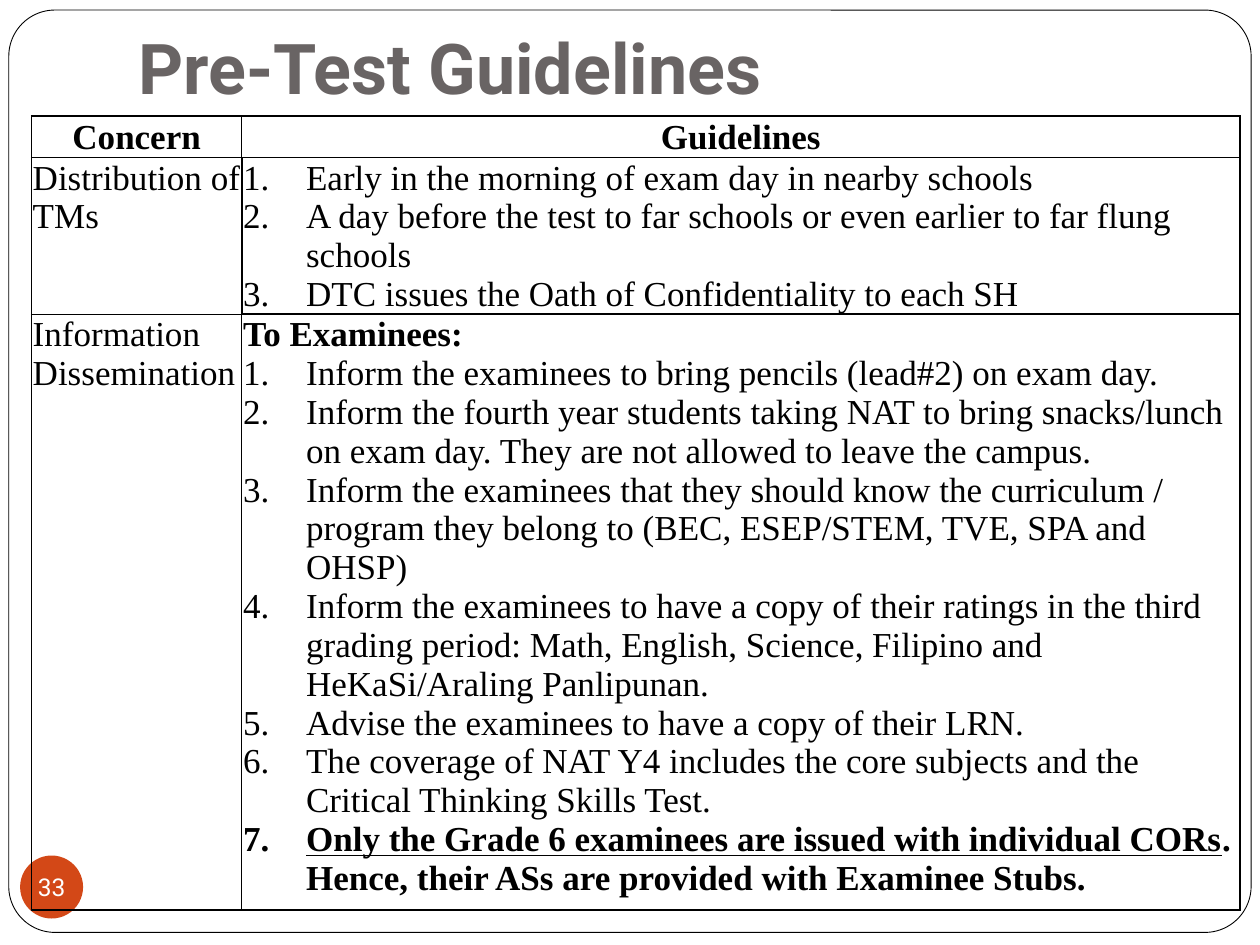
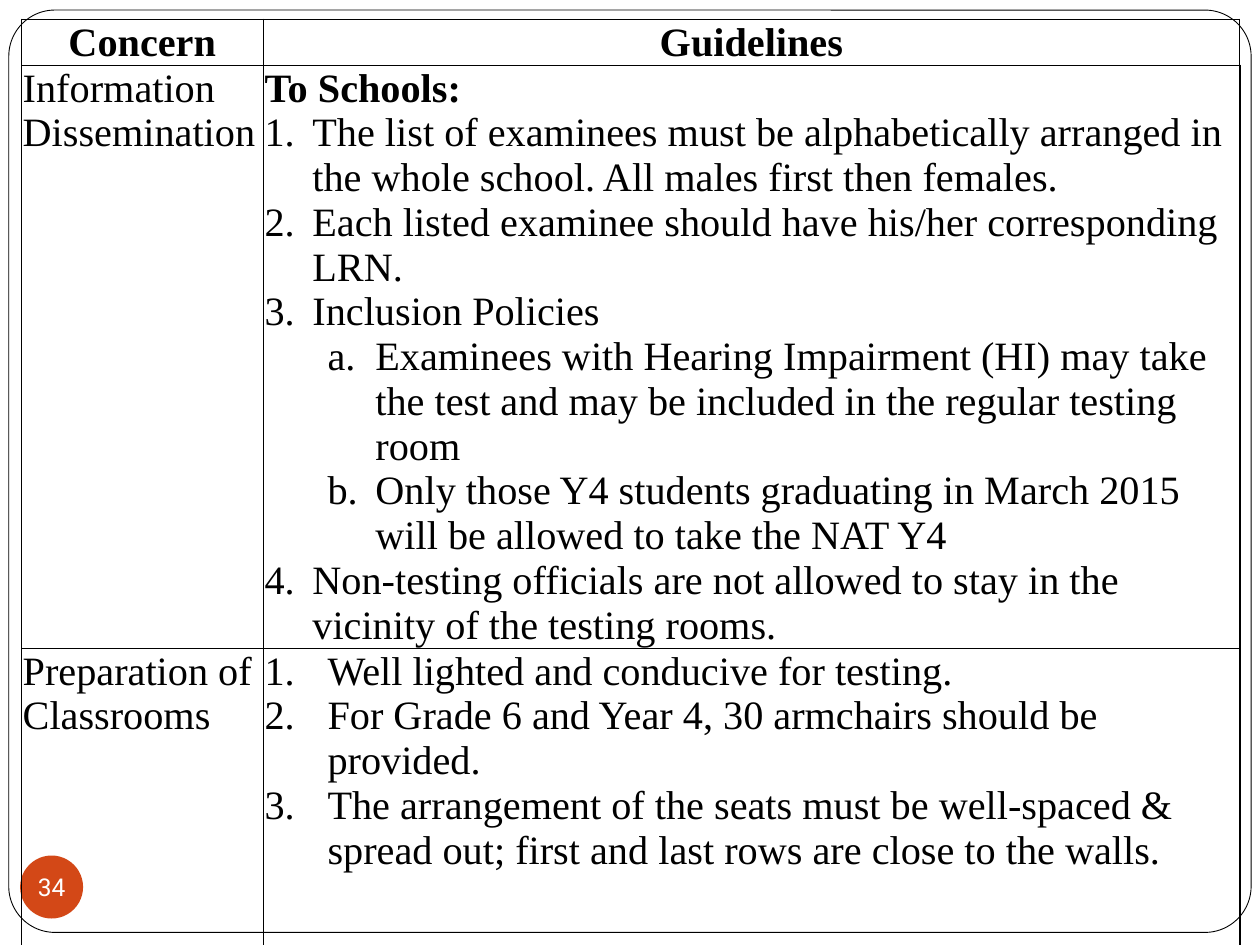
from dataclasses import dataclass

from lxml.etree import SubElement as sub
from pptx import Presentation
from pptx.dml.color import RGBColor as RGB
from pptx.enum.shapes import MSO_SHAPE as Shape
from pptx.enum.text import MSO_ANCHOR as Anchor
from pptx.enum.text import MSO_AUTO_SIZE as Fit
from pptx.enum.text import PP_ALIGN as Align
from pptx.oxml.ns import qn
from pptx.util import Emu, Pt


# Shared look and scale
@dataclass(frozen=True)
class Theme:
    ink: str = "000000"
    paper: str = "FFFFFF"
    grey: str = "696464"
    rust: str = "D34817"
    sans: str = "Roboto"
    serif: str = "Times New Roman"
    title: int = 40
    badge: int = 14
    dense: int = 20
    roomy: int = 23
    thin: float = 0.5
    thick: float = 1


LOOK = Theme()
THIN, THICK = LOOK.thin, LOOK.thick
SCALE = 9144  # 100 px to the inch
SIDES = ("a:lnL", "a:lnR", "a:lnT", "a:lnB")
MARKS = {"1": "arabicPeriod", "a": "alphaLcPeriod"}


def px(num):
    return Emu(num * SCALE)


def hue(code):
    return RGB.from_string(code)


# Text
def write(para, text, size, font=LOOK.serif, color=LOOK.ink,
          bold=False, under=False, align=Align.LEFT):
    para.alignment = align
    run = para.add_run()
    run.text = text
    face = run.font
    face.size, face.name = Pt(size), font
    face.bold, face.underline = bold, under
    face.color.rgb = hue(color)


def inset(item, left, top, right, base):
    item.margin_left, item.margin_top = px(left), px(top)
    item.margin_right, item.margin_bottom = px(right), px(base)


def number(para, mark, hang):
    """Number a paragraph with a hanging indent; letters sit one level in."""
    left = hang
    if mark == "a":
        para.level = 1
        left += 50
    props = para._p.get_or_add_pPr()
    props.set("marL", str(px(left)))
    props.set("indent", str(px(-hang)))
    sub(props, qn("a:buAutoNum"), type=MARKS[mark])


# Frame, page badge and title
def draw(slide, kind, box, fill, line=None):
    shape = slide.shapes.add_shape(kind, *map(px, box))
    shape.shadow.inherit = False
    shape.fill.solid()
    shape.fill.fore_color.rgb = hue(fill)
    if line:
        shape.line.color.rgb = hue(line)
        shape.line.width = Pt(THIN)
    else:
        shape.line.fill.background()
    return shape


def start(deck, layout, page):
    slide = deck.slides.add_slide(deck.slide_layouts.get_by_name(layout))
    frame = draw(slide, Shape.ROUNDED_RECTANGLE, (7, 8, 986, 732),
                 LOOK.paper, LOOK.ink)
    frame.adjustments[0] = 0.05
    slide.shapes.element.insert(2, frame.element)  # behind the title
    badge = draw(slide, Shape.OVAL, (16, 679, 50, 50), LOOK.rust)
    body = badge.text_frame
    inset(body, 0, 0, 0, 0)
    body.word_wrap = False
    body.vertical_anchor = Anchor.MIDDLE
    write(body.paragraphs[0], str(page), LOOK.badge, font=LOOK.sans,
          color=LOOK.paper, align=Align.CENTER)
    return slide


def head(slide, text):
    title = slide.shapes.title
    title.left, title.top, title.width, title.height = map(
        px, (100, 9, 850, 87))
    body = title.text_frame
    body.auto_size = Fit.NONE
    body.vertical_anchor = Anchor.BOTTOM
    inset(body, 10, 5, 10, 10)
    write(body.paragraphs[0], text, LOOK.title, font=LOOK.sans,
          color=LOOK.grey, bold=True)


# Table
def edge(cell, widths):
    """Rule a cell; widths run left, right, top, bottom."""
    props = cell._tc.get_or_add_tcPr()
    for side, width in zip(SIDES, widths):
        line = sub(props, qn(side), w=str(Pt(width)))
        sub(sub(line, qn("a:solidFill")), qn("a:srgbClr"), val=LOOK.ink)
    cell.fill.background()


def fill(cell, items, size, hang, align):
    """Each item is (mark, runs); each run is (text, format)."""
    body = cell.text_frame
    for pos, (mark, runs) in enumerate(items):
        para = body.add_paragraph() if pos else body.paragraphs[0]
        if mark:
            number(para, mark, hang)
        for text, style in runs:
            write(para, text, size, align=align, **style)


def grid(slide, box, cols, highs, rows, rules, size):
    """Each row is (concern, guidelines, hang)."""
    frame = slide.shapes.add_table(len(highs), len(cols), *map(px, box))
    table = frame.table
    table.first_row = table.horz_banding = False
    for col, wide in zip(table.columns, cols):
        col.width = px(wide)
    for row, high in zip(table.rows, highs):
        row.height = px(high)
    frame.height = px(box[3])
    top = ([bold("Concern")], [bold("Guidelines")], 0)
    for num, (left, right, hang) in enumerate([top, *rows]):
        align = Align.LEFT if num else Align.CENTER
        for pos, items in enumerate((left, right)):
            cell = table.cell(num, pos)
            inset(cell, 1, 1, 1, 0)
            cell.vertical_anchor = Anchor.TOP if num else Anchor.BOTTOM
            edge(cell, rules[num][pos])
            fill(cell, items, size, hang, align)


# Kinds of table line
def plain(text, mark=None):
    return mark, [(text, {})]


def bold(text):
    return None, [(text, {"bold": True})]


def steps(*texts, mark="1"):
    return [plain(text, mark) for text in texts]


# Wording
SPREAD = steps(
    "Early in the morning of exam day in nearby schools",
    "A day before the test to far schools or even earlier to far flung "
    "schools",
    "DTC issues the Oath of Confidentiality to each SH",
)
PUPILS = [
    bold("To Examinees:"),
    *steps(
        "Inform the examinees to bring pencils (lead#2) on exam day.",
        "Inform the fourth year students taking NAT to bring snacks/lunch "
        "on exam day. They are not allowed to leave the campus.",
        "Inform the examinees that they should know the curriculum / "
        "program they belong to (BEC, ESEP/STEM, TVE, SPA and OHSP)",
        "Inform the examinees to have a copy of their ratings in the third "
        "grading period: Math, English, Science, Filipino and "
        "HeKaSi/Araling Panlipunan.",
        "Advise the examinees to have a copy of their LRN.",
        "The coverage of NAT Y4 includes the core subjects and the "
        "Critical Thinking Skills Test.",
    ),
    ("1", [
        ("Only the Grade 6 examinees are issued with individual CORs",
         {"bold": True, "under": True}),
        (". Hence, their ASs are provided with Examinee Stubs.",
         {"bold": True}),
    ]),
]
SCHOOLS = [
    bold("To Schools:"),
    *steps(
        "The list of examinees must be alphabetically arranged in the "
        "whole school. All males first then females.",
        "Each listed examinee should have his/her corresponding LRN.",
        "Inclusion Policies",
    ),
    *steps(
        "Examinees with Hearing Impairment (HI) may take the test and may "
        "be included in the regular testing room",
        "Only those Y4 students graduating in March 2015 will be allowed "
        "to take the NAT Y4",
        mark="a",
    ),
    *steps("Non-testing officials are not allowed to stay in the vicinity "
           "of the testing rooms."),
]
ROOMS = steps(
    "Well lighted and conducive for testing.",
    "For Grade 6 and Year 4, 30 armchairs should be provided.",
    "The arrangement of the seats must be well-spaced & spread out; first "
    "and last rows are close to the walls.",
)
INFORM = [plain("Information Dissemination")]


def main():
    deck = Presentation()
    deck.slide_width, deck.slide_height = px(1000), px(750)

    # Guidelines for handing out tests and telling examinees
    slide = start(deck, "Title Only", 33)
    head(slide, "Pre-Test Guidelines")
    outer = (THIN, THICK, THICK, THICK)
    rules = [
        ((THICK, THIN, THICK, THIN), outer),
        ((THICK, THICK, THIN, THIN), (THICK,) * 4),
        ((THICK, THIN, THIN, THICK), outer),
    ]
    rows = [([plain("Distribution of TMs")], SPREAD, 50),
            (INFORM, PUPILS, 50)]
    grid(slide, (25, 92, 958, 619), (167, 792), (33, 112, 473),
         rows, rules, LOOK.dense)

    # Guidelines for schools and classrooms
    slide = start(deck, "Blank", 34)
    rules = [((THIN,) * 4,) * 2]
    for base in (THIN, THICK):
        rules.append(((THIN, THICK, THIN, base), (THICK, THICK, THIN, base)))
    rows = [(INFORM, SCHOOLS, 38),
            ([plain("Preparation of Classrooms")], ROOMS, 50)]
    grid(slide, (17, 15, 967, 726), (192, 775), (23, 264, 264),
         rows, rules, LOOK.roomy)

    deck.save("out.pptx")


if __name__ == "__main__":
    main()
